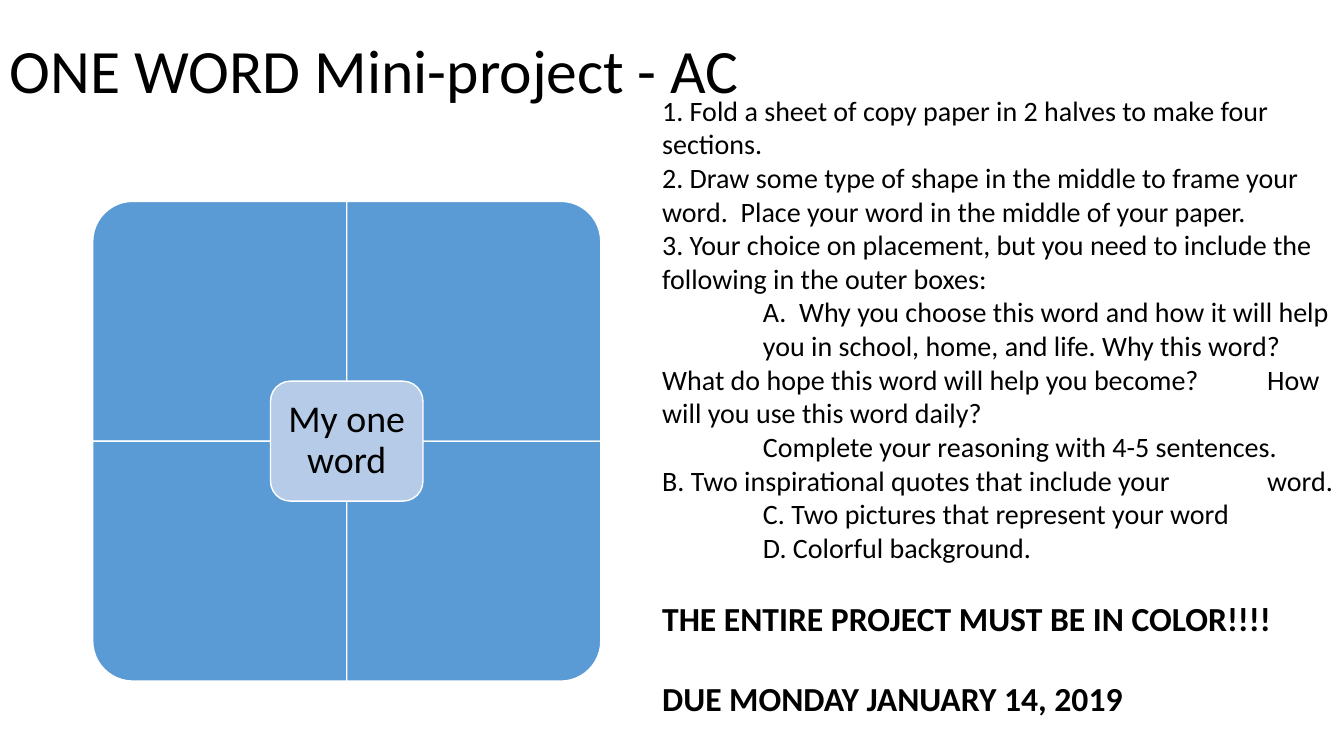
from dataclasses import dataclass

from pptx import Presentation
from pptx.dml.color import RGBColor
from pptx.enum.shapes import MSO_SHAPE
from pptx.enum.text import MSO_ANCHOR, MSO_AUTO_SIZE, PP_ALIGN
from pptx.util import Inches, Pt

QUARTER = MSO_SHAPE.ROUND_1_RECTANGLE
ROUND = MSO_SHAPE.ROUNDED_RECTANGLE
TOP, MIDDLE = MSO_ANCHOR.TOP, MSO_ANCHOR.MIDDLE
LEFT, CENTER = PP_ALIGN.LEFT, PP_ALIGN.CENTER
GROW = MSO_AUTO_SIZE.SHAPE_TO_FIT_TEXT


@dataclass(frozen=True)
class Theme:
    font: str = "Calibri"
    ink: str = "000000"
    edge: str = "FFFFFF"
    panel: str = "5B9BD5"
    core: str = "B5CBE7"
    title: int = 44
    label: int = 27
    body: int = 20
    loud: int = 24


THEME = Theme()

STEPS = [
    "1. Fold a sheet of copy paper in 2 halves to make four sections.",
    "2. Draw some type of shape in the middle to frame your word.  "
    "Place your word in the middle of your paper.",
    "3. Your choice on placement, but you need to include the following "
    "in the outer boxes:",
    "\tA.  Why you choose this word and how it will help \tyou in school, "
    "home, and life. Why this word? \tWhat do hope this word will help you "
    "become? \tHow will you use this word daily?",
    "\tComplete your reasoning with 4-5 sentences. \tB. Two inspirational "
    "quotes that include your \tword.",
    "\tC. Two pictures that represent your word",
    "\tD. Colorful background.",
]


def write(frame, text, size, bold=False, align=LEFT, lines=None, before=0):
    """Fill the empty first paragraph, or add a new one."""
    last = frame.paragraphs[-1]
    para = frame.add_paragraph() if last.runs else last
    para.alignment = align
    para.space_before = Pt(before)
    if lines:
        para.line_spacing = lines
    # Tab stops one inch apart
    para._p.get_or_add_pPr().set("defTabSz", str(Inches(1)))
    run = para.add_run()
    run.text = text
    font = run.font
    font.name, font.size, font.bold = THEME.font, Pt(size), bold
    font.color.rgb = RGBColor.from_string(THEME.ink)


class Board:
    """Slide measured in a grid of 100 columns by 100 rows."""

    def __init__(self, deck, theme):
        self.theme = theme
        self.slide = deck.slides.add_slide(deck.slide_layouts[6])
        self.col = deck.slide_width / 100
        self.row = deck.slide_height / 100

    def box(self, x, y, wide, high, anchor=TOP):
        area = self.slide.shapes.add_textbox(
            round(x * self.col), round(y * self.row),
            round(wide * self.col), round(high * self.row))
        frame = area.text_frame
        frame.word_wrap = True
        frame.vertical_anchor = anchor
        return frame

    def block(self, kind, mid, size, fill, turn=0):
        """Place a shape by its centre; size is what shows after turning."""
        wide, high = size[0] * self.col, size[1] * self.row
        if turn % 180:
            wide, high = high, wide
        shape = self.slide.shapes.add_shape(
            kind, round(mid[0] * self.col - wide / 2),
            round(mid[1] * self.row - high / 2), round(wide), round(high))
        shape.rotation = turn
        shape.shadow.inherit = False
        shape.fill.solid()
        shape.fill.fore_color.rgb = RGBColor.from_string(fill)
        shape.line.color.rgb = RGBColor.from_string(self.theme.edge)
        shape.line.width = Pt(1)
        return shape


def main():
    deck = Presentation()
    deck.slide_width, deck.slide_height = Inches(13.33), Inches(7.5)
    board = Board(deck, THEME)

    # Title
    head = board.box(0, 0, 59.87, 19.5, MIDDLE)
    write(head, "ONE WORD Mini-project - AC", THEME.title, lines=0.9)

    # Four quarters of the folded sheet, rounded at the outer corners
    hub_x, hub_y = 25.8, 58.36
    wide, high = 18.9, 31.73
    for side_x, side_y, turn in [(-1, -1, 270), (1, -1, 0),
                                 (-1, 1, 180), (1, 1, 90)]:
        mid = (hub_x + side_x * wide / 2, hub_y + side_y * high / 2)
        board.block(QUARTER, mid, (wide, high), THEME.panel, turn)

    # Word frame in the middle, 60% by 50% of a quarter
    core = board.block(ROUND, (hub_x, hub_y), (wide * 0.6, high * 0.5),
                       THEME.core)
    frame = core.text_frame
    frame.word_wrap = True
    frame.vertical_anchor = MIDDLE
    frame.margin_left = frame.margin_right = Inches(0.11)
    frame.margin_top = frame.margin_bottom = Inches(0.11)
    write(frame, "My one word", THEME.label, align=CENTER, lines=0.9)

    # Instructions
    guide = board.box(48.53, 11.68, 51.47, 93.33)
    guide.auto_size = GROW
    for step in STEPS:
        write(guide, step, THEME.body)
    write(guide, "THE ENTIRE PROJECT MUST BE IN COLOR!!!!", THEME.loud,
          bold=True, before=24)
    write(guide, "DUE MONDAY JANUARY 14, 2019", THEME.loud,
          bold=True, before=29)

    deck.save("out.pptx")


if __name__ == "__main__":
    main()
